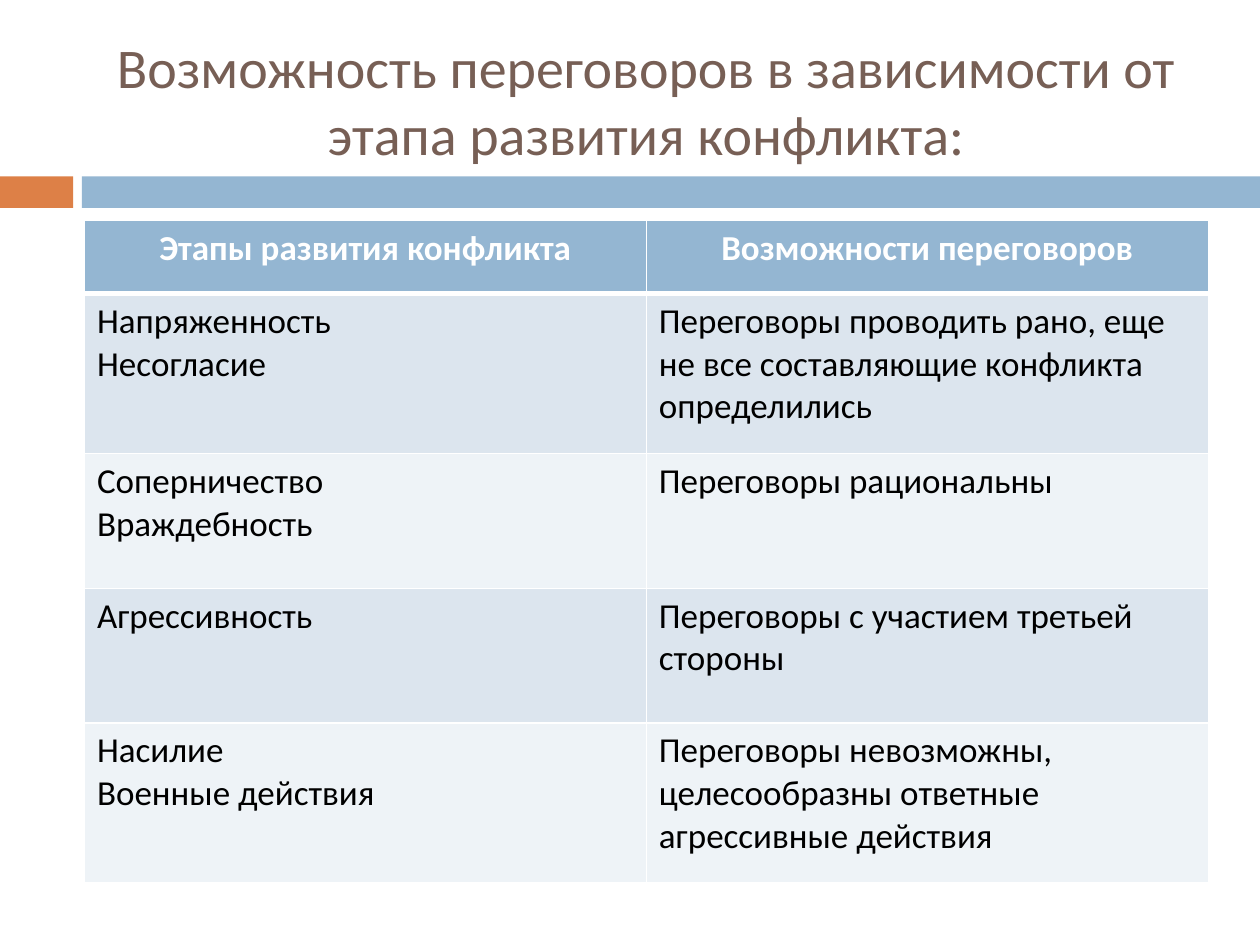
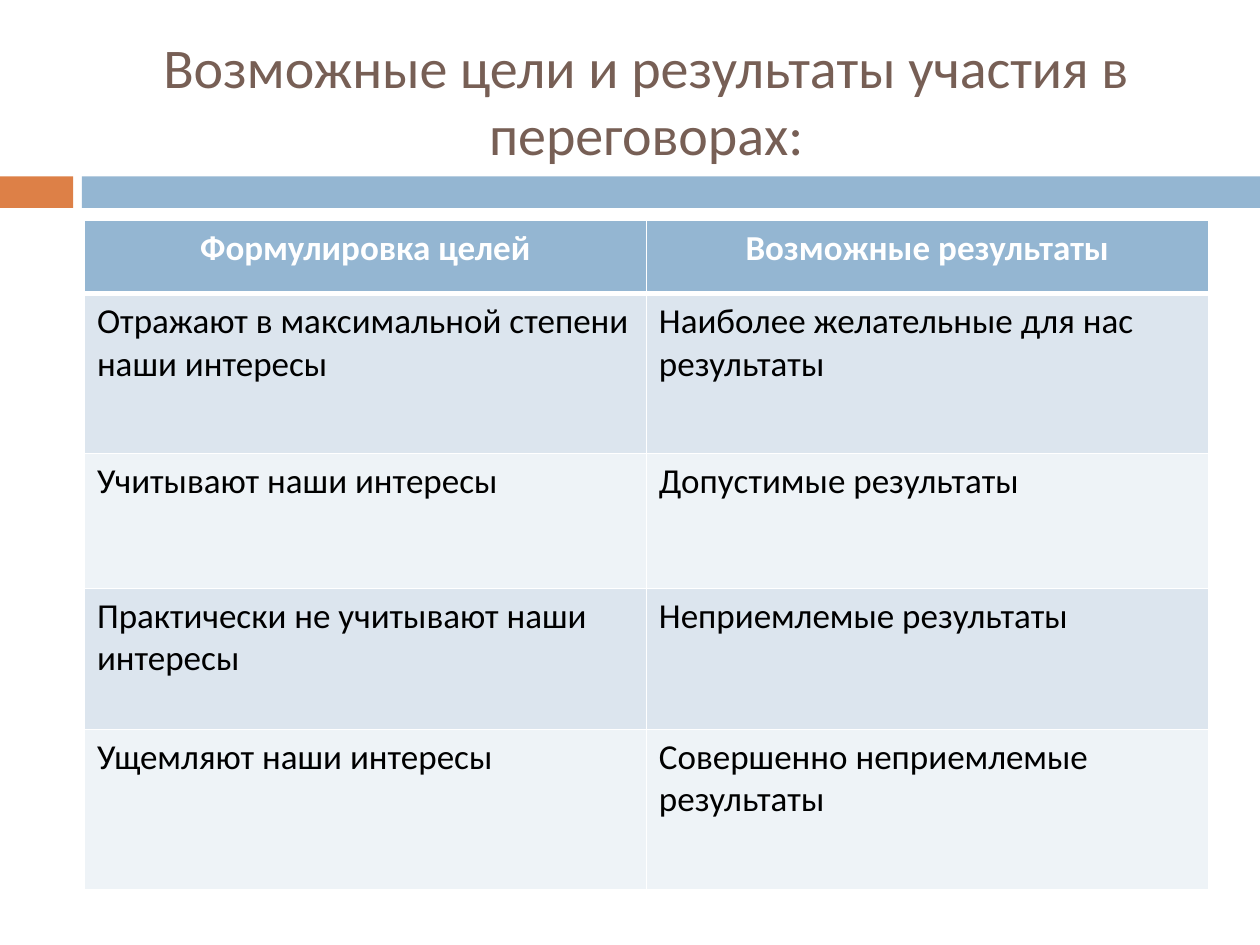
from dataclasses import dataclass

from lxml.etree import SubElement
from pptx import Presentation
from pptx.dml.color import RGBColor
from pptx.enum.shapes import MSO_SHAPE
from pptx.enum.text import MSO_ANCHOR, PP_ALIGN
from pptx.oxml.ns import qn
from pptx.util import Inches, Pt


@dataclass(frozen=True)
class Theme:
    font: str = "Calibri"
    title_size: int = 32
    table_size: int = 20
    title: str = "775F55"
    orange: str = "DD8047"
    blue: str = "94B6D2"
    odd_row: str = "DCE5EE"
    even_row: str = "EEF3F7"
    white: str = "FFFFFF"
    black: str = "000000"


THEME = Theme()
LEFT, CONTENT_WIDTH = 0.67, 8.92
BANDS = [(0, 0.58, THEME.orange), (0.65, 9.35, THEME.blue)]

# Each topic: title, row heights, table rows (a line break starts a new paragraph)
TOPICS = [
    (
        "Возможность переговоров в зависимости от этапа развития конфликта:",
        [0.58, 1.27, 1.07, 1.07, 1.27],
        [
            ("Этапы развития конфликта", "Возможности переговоров"),
            ("Напряженность\nНесогласие",
             "Переговоры проводить рано, еще не все составляющие конфликта определились"),
            ("Соперничество\nВраждебность", "Переговоры рациональны"),
            ("Агрессивность", "Переговоры с участием третьей стороны"),
            ("Насилие\nВоенные действия",
             "Переговоры невозможны, целесообразны ответные агрессивные действия"),
        ],
    ),
    (
        "Возможные цели и результаты участия в переговорах:",
        [0.58, 1.27, 1.07, 1.12, 1.27],
        [
            ("Формулировка целей", "Возможные результаты"),
            ("Отражают в максимальной степени наши интересы",
             "Наиболее желательные для нас результаты"),
            ("Учитывают наши интересы", "Допустимые результаты"),
            ("Практически не учитывают наши интересы", "Неприемлемые результаты"),
            ("Ущемляют наши интересы", "Совершенно неприемлемые результаты"),
        ],
    ),
]


def write(frame, text, size, color, bold=False, align=PP_ALIGN.LEFT):
    frame.text = text
    for paragraph in frame.paragraphs:
        paragraph.alignment = align
        for run in paragraph.runs:
            run.font.name = THEME.font
            run.font.size = Pt(size)
            run.font.bold = bold
            run.font.color.rgb = RGBColor.from_string(color)


def add_borders(cell, top, bottom):
    """Draw white cell edges; top and bottom are widths in points."""
    properties = cell._tc.get_or_add_tcPr()
    for edge, width in (("L", 1), ("R", 1), ("T", top), ("B", bottom)):
        line = SubElement(properties, qn(f"a:ln{edge}"), w=str(Pt(width)))
        fill = SubElement(line, qn("a:solidFill"))
        SubElement(fill, qn("a:srgbClr"), val=THEME.white)


deck = Presentation()
deck.slide_width, deck.slide_height = Inches(10), Inches(7.5)

for title, heights, rows in TOPICS:
    slide = deck.slides.add_slide(deck.slide_layouts[6])

    for left, width, color in BANDS:
        band = slide.shapes.add_shape(
            MSO_SHAPE.RECTANGLE, Inches(left), Inches(1.4), Inches(width), Inches(0.25))
        band.shadow.inherit = False
        band.fill.solid()
        band.fill.fore_color.rgb = RGBColor.from_string(color)
        band.line.fill.background()

    heading = slide.shapes.add_textbox(
        Inches(LEFT), Inches(0.25), Inches(CONTENT_WIDTH), Inches(1.08)).text_frame
    heading.word_wrap = True
    heading.vertical_anchor = MSO_ANCHOR.MIDDLE
    write(heading, title, THEME.title_size, THEME.title, align=PP_ALIGN.CENTER)

    table = slide.shapes.add_table(
        len(rows), 2, Inches(LEFT), Inches(1.75),
        Inches(CONTENT_WIDTH), Inches(sum(heights))).table
    for column in table.columns:
        column.width = Inches(CONTENT_WIDTH / 2)

    for r, (height, texts) in enumerate(zip(heights, rows)):
        table.rows[r].height = Inches(height)
        is_header = r == 0
        row_color = THEME.blue if is_header else THEME.odd_row if r % 2 else THEME.even_row
        for c, text in enumerate(texts):
            cell = table.cell(r, c)
            add_borders(cell, top=3 if r == 1 else 1, bottom=3 if is_header else 1)
            cell.fill.solid()
            cell.fill.fore_color.rgb = RGBColor.from_string(row_color)
            write(cell.text_frame, text, THEME.table_size,
                  THEME.white if is_header else THEME.black, bold=is_header,
                  align=PP_ALIGN.CENTER if is_header else PP_ALIGN.LEFT)

deck.save("out.pptx")
